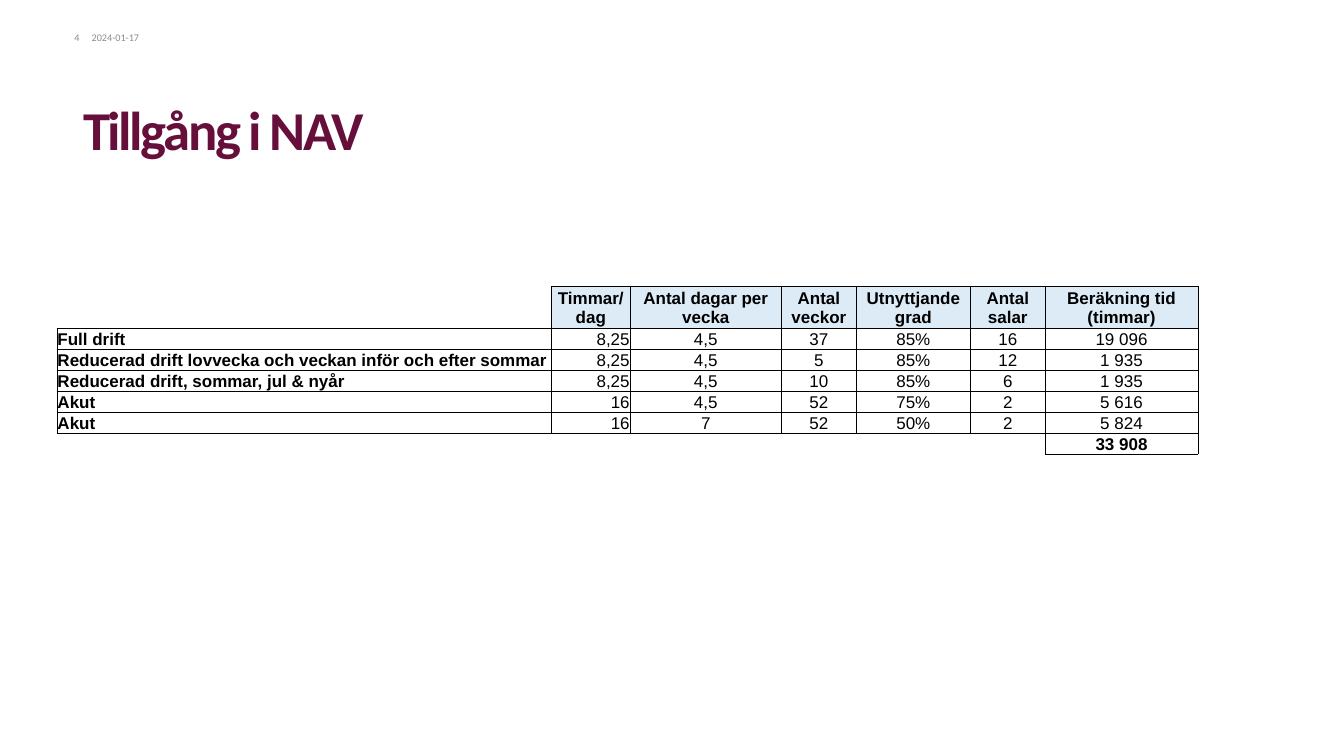
"""Build the slide on available operating hours in NAV."""
from lxml import etree
from pptx import Presentation
from pptx.dml.color import RGBColor
from pptx.enum import text
from pptx.oxml import ns
from pptx.util import Pt

PLUM = RGBColor(0x67, 0x0F, 0x3B)
GREY = RGBColor(0x8C, 0x8C, 0x8C)
BLACK = RGBColor(0, 0, 0)
PALE_BLUE = RGBColor(0xDD, 0xEB, 0xF7)
PLAIN_STYLE = "{2D5ABB26-0587-4C30-8999-92F81FD0307C}"
LEFT, CENTER, RIGHT = text.PP_ALIGN.LEFT, text.PP_ALIGN.CENTER, text.PP_ALIGN.RIGHT
TOP, MIDDLE, BOTTOM = text.MSO_ANCHOR.TOP, text.MSO_ANCHOR.MIDDLE, text.MSO_ANCHOR.BOTTOM


def write(paragraph, words, align, color, **font_format):
    """Fill a paragraph with one formatted run."""
    paragraph.alignment = align
    run = paragraph.add_run()
    run.text = words
    run.font.color.rgb = color
    for key, value in font_format.items():
        setattr(run.font, key, value)
    return run


def add_border(cell, side):
    """Add a thin black border to one side of a cell."""
    line = etree.SubElement(cell._tc.get_or_add_tcPr(), ns.qn(f"a:ln{side}"), w=str(Pt(0.5)))
    fill = etree.SubElement(line, ns.qn("a:solidFill"))
    etree.SubElement(fill, ns.qn("a:srgbClr"), val=str(BLACK))


prs = Presentation()
prs.slide_width, prs.slide_height = Pt(1583.28), Pt(890.64)
slide = prs.slides.add_slide(prs.slide_layouts[6])

labels = [
    ("Tillgång i NAV", (97.9, 96.5, 1387.4, 99.4), LEFT, BOTTOM, 5.76, PLUM, 64.5, True),
    ("2024-01-17", (108, 37.4, 62.6, 14.4), LEFT, TOP, 0, GREY, 12, False),
    ("4", (65.5, 37.4, 28.1, 14.4), RIGHT, TOP, 0, GREY, 12, False),
]
for words, place, align, anchor, bottom, color, size, bold in labels:
    frame = slide.shapes.add_textbox(*map(Pt, place)).text_frame
    frame.word_wrap = True
    frame.vertical_anchor = anchor
    frame.margin_left = frame.margin_right = frame.margin_top = 0
    frame.margin_bottom = Pt(bottom)
    run = write(frame.paragraphs[0], words, align, color, name="Calibri", size=Pt(size), bold=bold)
    if bold:
        frame.paragraphs[0].line_spacing = 0.85
        run._r.get_or_add_rPr().set("spc", "-280")

hours = [
    ["", "Timmar/ dag", "Antal dagar per vecka", "Antal veckor", "Utnyttjande grad",
     "Antal salar", "Beräkning tid (timmar)"],
    ["Full drift", "8,25", "4,5", "37", "85%", "16", "19 096"],
    ["Reducerad drift lovvecka och veckan inför och efter sommar",
     "8,25", "4,5", "5", "85%", "12", "1 935"],
    ["Reducerad drift, sommar, jul & nyår", "8,25", "4,5", "10", "85%", "6", "1 935"],
    ["Akut", "16", "4,5", "52", "75%", "2", "5 616"],
    ["Akut", "16", "7", "52", "50%", "2", "5 824"],
    ["", "", "", "", "", "", "33 908"],
]
widths = [582.5, 93, 178, 88.5, 134, 88.5, 179.5]
heights = [46] + [23] * 6
last = len(hours) - 1
sides = {"L": (0, -1), "R": (0, 1), "T": (-1, 0), "B": (1, 0)}
filled = {(r, c) for r, row in enumerate(hours) for c, words in enumerate(row) if words}

table_frame = slide.shapes.add_table(len(hours), len(widths), Pt(67), Pt(337.7),
                                     Pt(sum(widths)), Pt(sum(heights)))
table = table_frame.table
table.first_row = table.horz_banding = False
table._tbl.tblPr.find(ns.qn("a:tableStyleId")).text = PLAIN_STYLE
for column, width in zip(table.columns, widths):
    column.width = Pt(width)
for row, height in zip(table.rows, heights):
    row.height = Pt(height)

for r, row in enumerate(hours):
    for c, words in enumerate(row):
        cell = table.cell(r, c)
        cell.margin_left = cell.margin_right = cell.margin_top = Pt(0.72 if words else 0)
        cell.margin_bottom = 0
        cell.vertical_anchor = BOTTOM if r else MIDDLE
        for side, (down, across) in sides.items():
            if {(r, c), (r + down, c + across)} & filled:
                add_border(cell, side)
        if words and r == 0:
            cell.fill.solid()
            cell.fill.fore_color.rgb = PALE_BLUE
        else:
            cell.fill.background()
        if words:
            align = LEFT if c == 0 else RIGHT if c == 1 and r else CENTER
            write(cell.text_frame.paragraphs[0], words, align, BLACK,
                  name="Arial", size=Pt(20), bold=r in (0, last) or c == 0)

prs.save("out.pptx")
